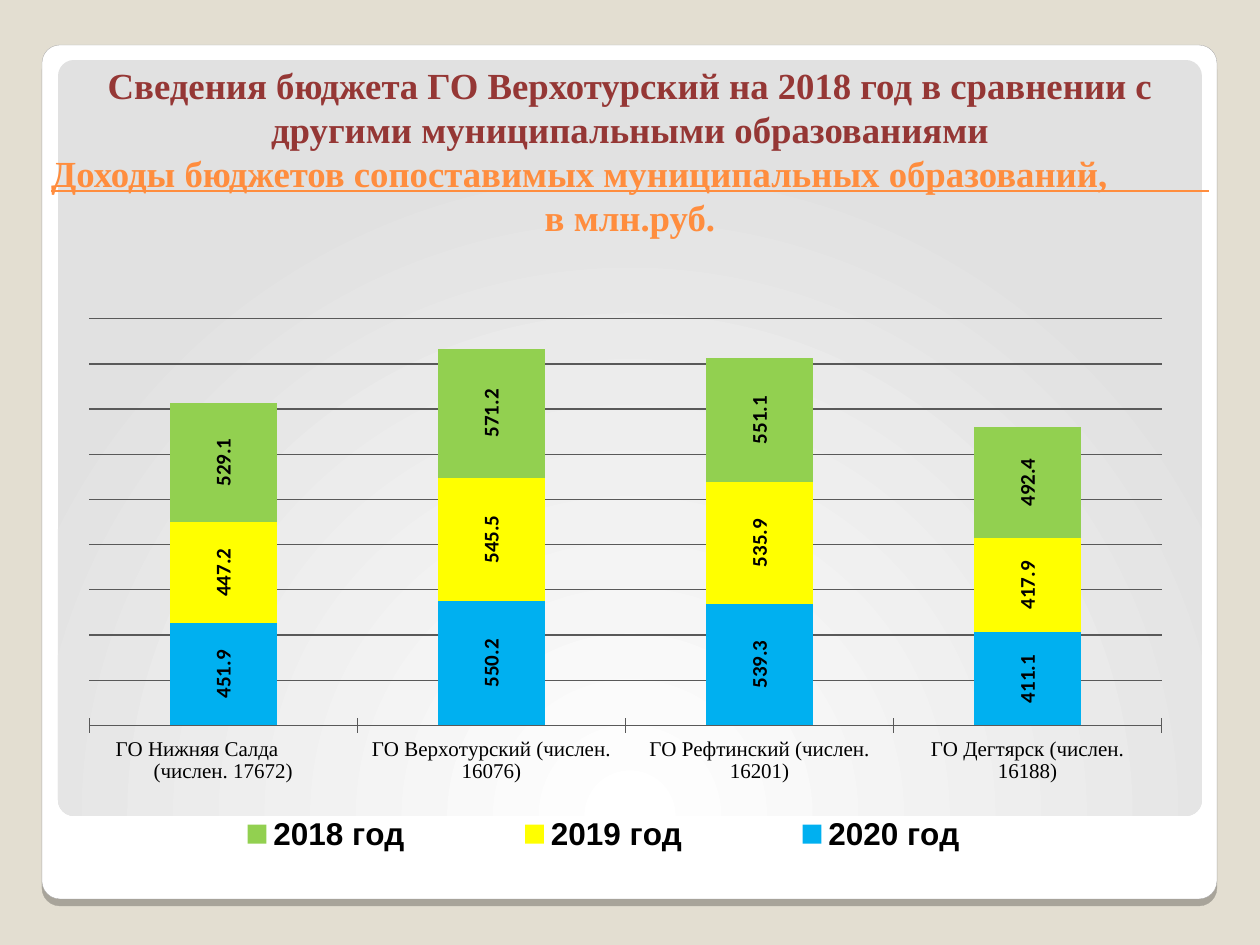
from lxml import etree
from pptx import Presentation
from pptx.chart.data import CategoryChartData
from pptx.dml.color import RGBColor
from pptx.enum.chart import XL_CHART_TYPE, XL_LEGEND_POSITION, XL_TICK_LABEL_POSITION, XL_TICK_MARK
from pptx.enum.shapes import MSO_SHAPE
from pptx.enum.text import MSO_ANCHOR, PP_ALIGN
from pptx.oxml import parse_xml
from pptx.oxml.ns import nsdecls, qn
from pptx.util import Emu, Pt

STACKED = XL_CHART_TYPE.COLUMN_STACKED
LEGEND_RIGHT = XL_LEGEND_POSITION.RIGHT
LABELS_LOW = XL_TICK_LABEL_POSITION.LOW
TICK_CROSS = XL_TICK_MARK.CROSS
ROUNDED = MSO_SHAPE.ROUNDED_RECTANGLE
BOTTOM = MSO_ANCHOR.BOTTOM
CENTER = PP_ALIGN.CENTER

PX = 914400 // 126
SERIF = "Times New Roman"
COLORS = {
    "background": "E3DED1", "panel": "FFFFFF", "panel_line": "A4A3A3",
    "shade": "E1E1E1", "heading": "953735", "subheading": "FF8D3E",
    "text": "000000", "grid": "595959",
    "2020": "00B0F0", "2019": "FFFF00", "2018": "92D050",
}
CATEGORIES = [
    "ГО Нижняя Салда           (числен. 17672)",
    "ГО Верхотурский (числен. 16076)",
    "ГО Рефтинский (числен. 16201)",
    "ГО Дегтярск (числен. 16188)",
]
INCOME = {
    "2020": [451.9, 550.2, 539.3, 411.1],
    "2019": [447.2, 545.5, 535.9, 417.9],
    "2018": [529.1, 571.2, 551.1, 492.4],
}
# Title runs: text, colour, underlined, followed by a line break
TITLE = [
    ("Сведения бюджета ГО Верхотурский на 2018 год в сравнении с другими "
     "муниципальными образованиями", "heading", False, True),
    ("Доходы бюджетов сопоставимых муниципальных образований,            ",
     "subheading", True, False),
    ("в млн.руб.", "subheading", False, False),
]


def color(name):
    return RGBColor.from_string(COLORS[name])


def to_emu(box):
    return [Emu(length * PX) for length in box]


def style_font(font, size, name, bold=False, color_name="text"):
    font.size = Pt(size)
    font.name = name
    font.bold = bold
    font.color.rgb = color(color_name)


def add_rounded(slide, box, radius):
    shape = slide.shapes.add_shape(ROUNDED, *to_emu(box))
    shape.adjustments[0] = radius / min(box[2:])
    shape.shadow.inherit = False
    return shape


def add_panel(slide, box):
    left, top, width, height = box

    # White card with a shadow below
    card = add_rounded(slide, box, 18)
    card.fill.solid()
    card.fill.fore_color.rgb = color("panel")
    card.line.color.rgb = color("panel_line")
    card.line.width = Pt(0.16)
    effects = card._element.spPr.find(qn("a:effectLst"))
    effects.append(parse_xml(
        f'<a:outerShdw {nsdecls("a")} blurRad="0" dist="50800" dir="5400000" '
        'algn="t" rotWithShape="0"><a:srgbClr val="000000">'
        '<a:alpha val="25000"/></a:srgbClr></a:outerShdw>'))

    # Inner area with a radial gradient
    inner = add_rounded(slide, (left + 16, top + 15, width - 31, height - 98), 16)
    inner.line.fill.background()
    inner.fill.background()
    properties = inner._element.spPr
    gradient = parse_xml(
        f'<a:gradFill {nsdecls("a")} rotWithShape="1"><a:gsLst>'
        f'<a:gs pos="0"><a:srgbClr val="{COLORS["panel"]}"/></a:gs>'
        f'<a:gs pos="100000"><a:srgbClr val="{COLORS["shade"]}"/></a:gs></a:gsLst>'
        '<a:path path="circle"><a:fillToRect l="50000" t="175000" '
        'r="50000" b="-75000"/></a:path></a:gradFill>')
    properties.replace(properties.find(qn("a:noFill")), gradient)


def add_title(slide, box):
    text_frame = slide.shapes.add_textbox(*to_emu(box)).text_frame
    text_frame.word_wrap = True
    text_frame.vertical_anchor = BOTTOM
    paragraph = text_frame.paragraphs[0]
    paragraph.alignment = CENTER
    for text, color_name, underlined, line_break in TITLE:
        run = paragraph.add_run()
        run.text = text
        style_font(run.font, 21, SERIF, True, color_name)
        run.font.underline = underlined
        if line_break:
            paragraph.add_line_break()


def set_layout(layout, **values):
    """Fill a c:layout element with a manual layout in chart fractions."""
    manual = etree.SubElement(layout, qn("c:manualLayout"))
    for tag, value in values.items():
        etree.SubElement(manual, qn(f"c:{tag}")).set("val", str(value))


def add_income_chart(slide, box):
    data = CategoryChartData(number_format="0.0")
    data.categories = CATEGORIES
    for year, values in INCOME.items():
        data.add_series(f"{year} год", values)
    chart = slide.shapes.add_chart(STACKED, *to_emu(box), data).chart
    chart.has_title = False
    style_font(chart.font, 18, "Calibri")

    # Columns and their upright labels
    plot = chart.plots[0]
    plot.vary_by_categories = False
    plot.overlap = 100
    plot.gap_width = 150
    for series, year in zip(plot.series, INCOME):
        series.format.fill.solid()
        series.format.fill.fore_color.rgb = color(year)
        labels = series.data_labels
        labels.show_value = True
        style_font(labels.font, 12, "Calibri", True)
        body = labels._element.find(qn("c:txPr")).find(qn("a:bodyPr"))
        body.set("rot", "-5400000")
        body.set("vert", "horz")

    # Axes
    value_axis = chart.value_axis
    value_axis.visible = False
    value_axis.minimum_scale = 0
    value_axis.maximum_scale = 1800
    value_axis.major_unit = 200
    value_axis.has_major_gridlines = True
    category_axis = chart.category_axis
    category_axis.tick_label_position = LABELS_LOW
    category_axis.major_tick_mark = TICK_CROSS
    style_font(category_axis.tick_labels.font, 12, SERIF)
    for line in (value_axis.major_gridlines.format.line, category_axis.format.line):
        line.color.rgb = color("grid")
        line.width = Pt(0.75)

    # Legend below the plot
    chart.has_legend = True
    legend = chart.legend
    legend.position = LEGEND_RIGHT
    legend.include_in_layout = False
    style_font(legend.font, 18, "Arial", True)
    legend_layout = legend._element.find(qn("c:layout"))
    if legend_layout is None:
        legend_layout = etree.Element(qn("c:layout"))
        legend._element.find(qn("c:legendPos")).addnext(legend_layout)
    set_layout(legend_layout, xMode="edge", yMode="edge", x=0.07, y=0.87, w=0.83, h=0.09)

    plot_area = chart._chartSpace.chart.plotArea
    plot_layout = plot_area.find(qn("c:layout"))
    if plot_layout is None:
        plot_layout = etree.Element(qn("c:layout"))
        plot_area.insert(0, plot_layout)
    set_layout(plot_layout, layoutTarget="inner", xMode="edge", yMode="edge",
               x=0.027, y=0.07, w=0.955, h=0.667)


def main():
    presentation = Presentation()
    presentation.slide_width = Emu(1260 * PX)
    presentation.slide_height = Emu(945 * PX)
    slide = presentation.slides.add_slide(presentation.slide_layouts[6])
    slide.background.fill.solid()
    slide.background.fill.fore_color.rgb = color("background")
    add_panel(slide, (42, 45, 1175, 854))
    add_title(slide, (29, 59, 1202, 186))
    add_income_chart(slide, (59, 276, 1123, 610))
    presentation.save("out.pptx")


if __name__ == "__main__":
    main()
